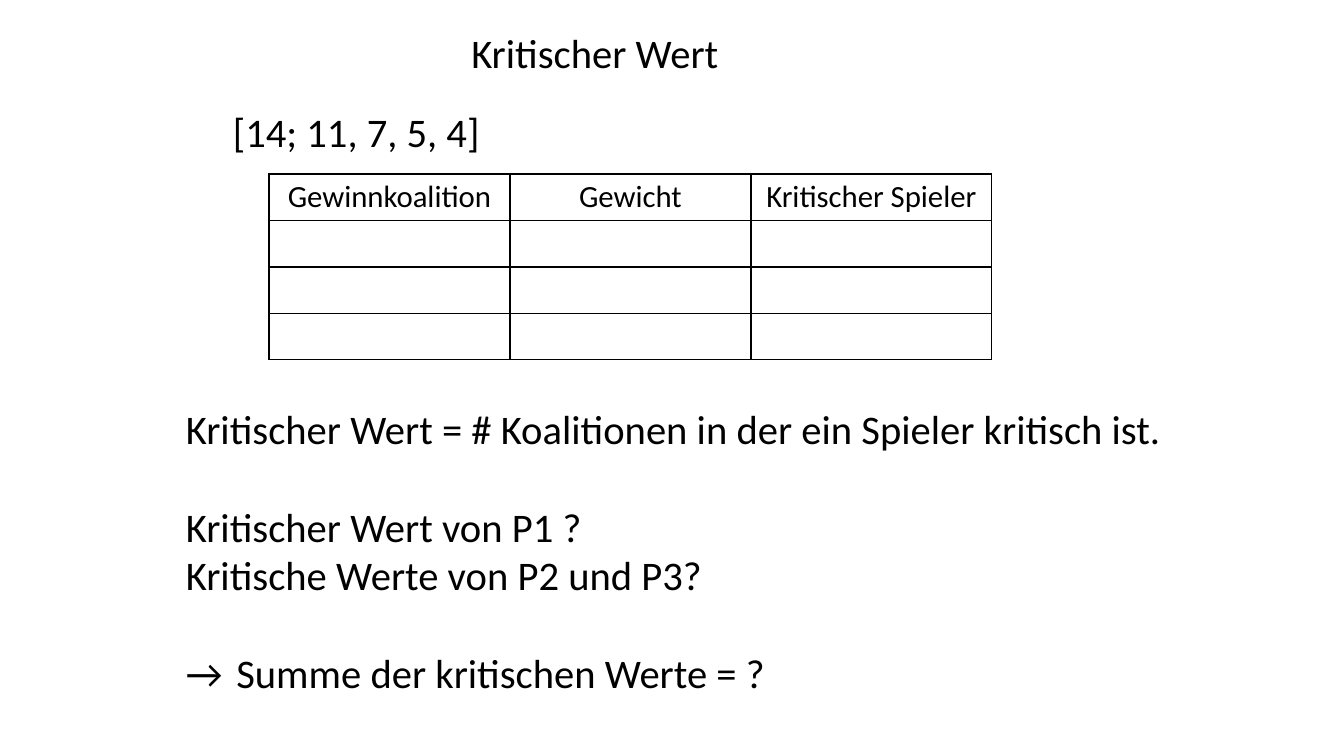
"""Build the slide on critical values in a weighted voting game."""
from dataclasses import dataclass

from lxml import etree
from pptx import Presentation
from pptx.dml.color import RGBColor
from pptx.enum.text import MSO_ANCHOR, PP_ALIGN
from pptx.oxml.ns import qn
from pptx.util import Pt

EMU_PER_PX = 914400 / 100.8
COLORS = {"ink": "000000", "paper": "FFFFFF"}
FONT = "Calibri"
BODY_SIZE = 29
HEADER_SIZE = 22
GAP = 35
LEFT, CENTER = PP_ALIGN.LEFT, PP_ALIGN.CENTER
TOP, MIDDLE = MSO_ANCHOR.TOP, MSO_ANCHOR.MIDDLE


@dataclass(frozen=True)
class Line:
    text: str
    space_before: int = 0


@dataclass(frozen=True)
class TextBlock:
    left: int
    top: int
    width: int
    height: int
    lines: tuple[Line, ...]
    align: PP_ALIGN = LEFT
    anchor: MSO_ANCHOR = TOP


@dataclass(frozen=True)
class Grid:
    left: int
    top: int
    width: int
    height: int
    headers: tuple[str, ...]
    rows: int


BLOCKS = (
    TextBlock(176, 11, 838, 82, (Line("Kritischer Wert"),), CENTER, MIDDLE),
    TextBlock(223, 102, 745, 72, (Line("[14; 11, 7, 5, 4]"),)),
    TextBlock(176, 399, 1060, 309, (
        Line("Kritischer Wert = # Koalitionen in der ein Spieler kritisch ist."),
        Line("Kritischer Wert von P1 ?", GAP),
        Line("Kritische Werte von P2 und P3?"),
        Line("→\tSumme der kritischen Werte = ?", GAP),
    )),
)
COALITIONS = Grid(269, 174, 723, 186,
                  ("Gewinnkoalition", "Gewicht", "Kritischer Spieler"), 4)


def px(value: int) -> int:
    return round(value * EMU_PER_PX)


def add_span(para, text: str, size: int) -> None:
    span = para.add_run()
    span.text = text
    span.font.name = FONT
    span.font.size = Pt(size)
    span.font.color.rgb = RGBColor.from_string(COLORS["ink"])


def add_text(page, block: TextBlock) -> None:
    box = page.shapes.add_textbox(px(block.left), px(block.top),
                                  px(block.width), px(block.height))
    frame = box.text_frame
    frame.word_wrap = True
    frame.vertical_anchor = block.anchor
    for index, line in enumerate(block.lines):
        para = frame.add_paragraph() if index else frame.paragraphs[0]
        para.alignment = block.align
        if line.space_before:
            para.space_before = Pt(line.space_before)
        add_span(para, line.text, BODY_SIZE)


def style_cell(cell) -> None:
    cell.margin_top = cell.margin_bottom = px(4)
    cell.margin_left = cell.margin_right = px(9)
    cell.vertical_anchor = TOP
    properties = cell._tc.get_or_add_tcPr()
    for side in ("a:lnL", "a:lnR", "a:lnT", "a:lnB"):
        border = etree.SubElement(properties, qn(side), w=str(Pt(1)))
        fill = etree.SubElement(border, qn("a:solidFill"))
        etree.SubElement(fill, qn("a:srgbClr"), val=COLORS["ink"])
    cell.fill.solid()
    cell.fill.fore_color.rgb = RGBColor.from_string(COLORS["paper"])


def add_grid(page, grid: Grid) -> None:
    table = page.shapes.add_table(grid.rows, len(grid.headers),
                                  px(grid.left), px(grid.top),
                                  px(grid.width), px(grid.height)).table
    table.first_row = table.horz_banding = False
    for cell in table.iter_cells():
        style_cell(cell)
    for column, header in enumerate(grid.headers):
        para = table.cell(0, column).text_frame.paragraphs[0]
        para.alignment = CENTER
        add_span(para, header, HEADER_SIZE)


def main() -> None:
    deck = Presentation()
    deck.slide_width, deck.slide_height = px(1344), px(756)
    page = deck.slides.add_slide(deck.slide_layouts[6])
    for block in BLOCKS:
        add_text(page, block)
    add_grid(page, COALITIONS)
    deck.save("out.pptx")


if __name__ == "__main__":
    main()
